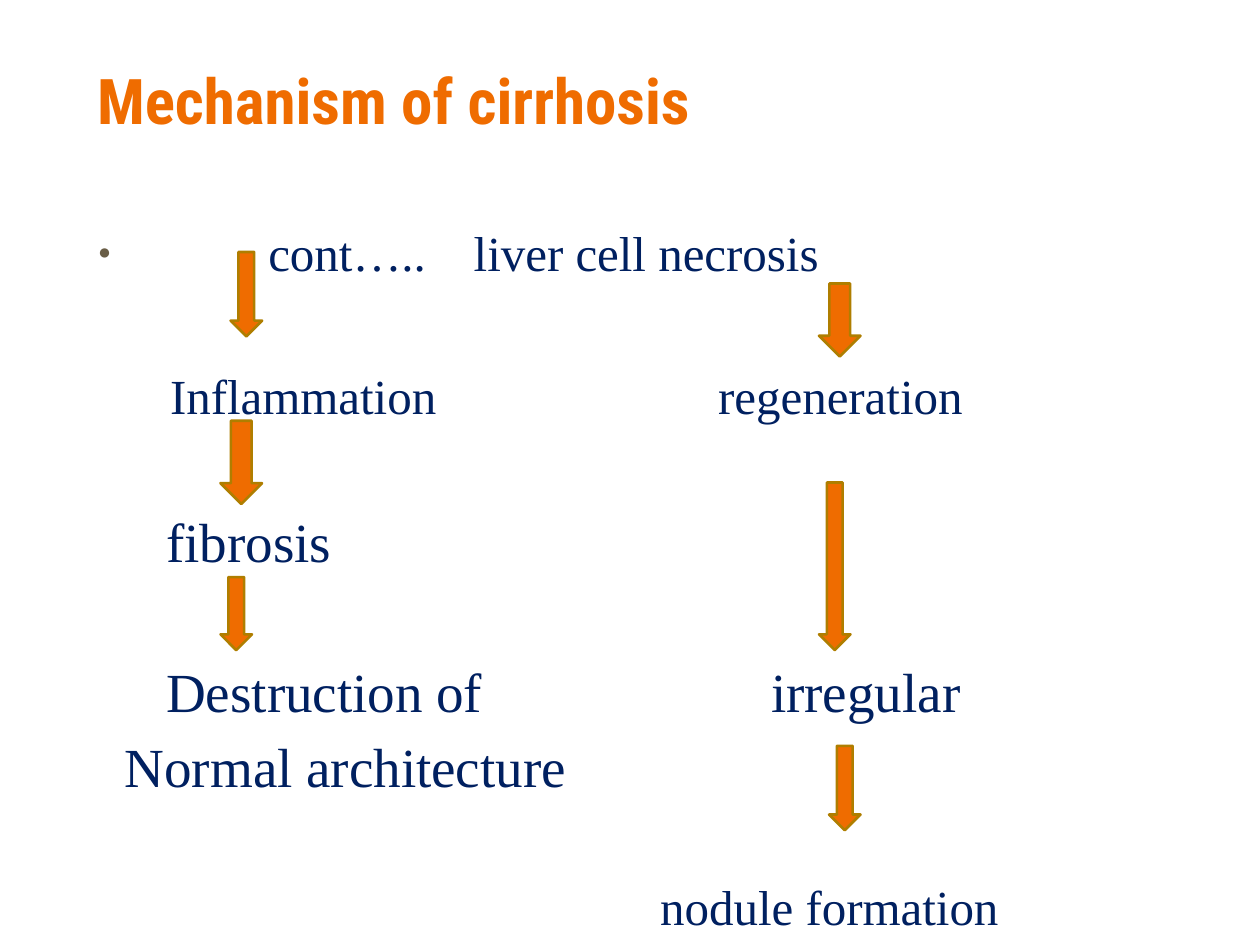
import pptx
import pptx.dml.color
import pptx.enum.shapes
import pptx.enum.text
import pptx.oxml.ns
import pptx.util
from lxml import etree
from pptx.util import Inches

ORANGE = "EF6C00"
OUTLINE = "AF7E00"
NAVY = "002060"
BROWN = "695D46"

LABELS = [
    ("liver cell necrosis", 3.09, 0.02, 2.9, 28),
    ("Inflammation", 0.68, 1.15, 2.3, 28),
    ("regeneration", 5.03, 1.15, 2.2, 28),
    ("fibrosis", 0.65, 2.28, 1.6, 31.5),
    ("Destruction of", 0.65, 3.47, 2.8, 31.5),
    ("irregular", 5.45, 3.47, 1.8, 31.5),
    ("Normal architecture", 0.32, 4.06, 3.8, 31.5),
    ("nodule formation", 4.57, 5.21, 2.9, 28),
]
ARROWS = [
    (1.16, 0.25, 0.25, 0.67),
    (1.08, 1.59, 0.33, 0.66),
    (1.08, 2.83, 0.25, 0.58),
    (5.83, 0.5, 0.33, 0.58),
    (5.83, 2.08, 0.25, 1.33),
    (5.91, 4.17, 0.25, 0.67),
]


def color(value):
    """Turn a hex string into a colour."""
    return pptx.dml.color.RGBColor.from_string(value)


def format_font(font, name, size, value, bold=False):
    """Set the face, size, colour and weight of a font."""
    font.name = name
    font.size = pptx.util.Pt(size)
    font.bold = bold
    font.color.rgb = color(value)


def add_bullet(paragraph, indent):
    """Give a paragraph a small round bullet with a hanging indent."""
    properties = paragraph._p.get_or_add_pPr()
    properties.set("marL", str(indent))
    properties.set("indent", str(-indent))
    bullet_color = etree.SubElement(properties, pptx.oxml.ns.qn("a:buClr"))
    etree.SubElement(bullet_color, pptx.oxml.ns.qn("a:srgbClr"), val=BROWN)
    etree.SubElement(properties, pptx.oxml.ns.qn("a:buSzPct"), val="44000")
    etree.SubElement(properties, pptx.oxml.ns.qn("a:buFont"), typeface="Arial")
    etree.SubElement(properties, pptx.oxml.ns.qn("a:buChar"), char="●")


def add_label(slide, text, left, top, width, size, bullet_indent=None):
    """Add one line of text without margins."""
    box = slide.shapes.add_textbox(left, top, width, Inches(size / 65))
    frame = box.text_frame
    frame.word_wrap = True
    frame.margin_left = frame.margin_right = 0
    frame.margin_top = frame.margin_bottom = 0
    frame.text = text
    paragraph = frame.paragraphs[0]
    if bullet_indent is not None:
        add_bullet(paragraph, bullet_indent)
    format_font(paragraph.runs[0].font, "Times New Roman", size, NAVY)


def add_arrow(slide, left, top, width, height):
    """Add an outlined arrow that points down."""
    arrow = slide.shapes.add_shape(
        pptx.enum.shapes.MSO_SHAPE.DOWN_ARROW, left, top, width, height)
    arrow.shadow.inherit = False
    arrow.fill.solid()
    arrow.fill.fore_color.rgb = color(ORANGE)
    arrow.line.color.rgb = color(OUTLINE)
    arrow.line.width = pptx.util.Pt(1.5)


def format_title(slide, left, top, width, height):
    """Place and format the slide title."""
    title = slide.shapes.title
    title.left, title.top, title.width, title.height = left, top, width, height
    frame = title.text_frame
    frame.text = "Mechanism of cirrhosis"
    frame.vertical_anchor = pptx.enum.text.MSO_ANCHOR.MIDDLE
    paragraph = frame.paragraphs[0]
    paragraph.alignment = pptx.enum.text.PP_ALIGN.LEFT
    format_font(paragraph.runs[0].font, "Roboto Condensed", 36, ORANGE, True)


def add_flow(slide, left, top):
    """Draw the two branches of the mechanism from the given corner."""
    add_label(slide, "cont…..", left + Inches(0.11), top + Inches(0.02),
              Inches(2.8), 28, Inches(1.35))
    for text, x, y, width, size in LABELS:
        add_label(slide, text, left + Inches(x), top + Inches(y), Inches(width), size)
    for x, y, width, height in ARROWS:
        add_arrow(slide, left + Inches(x), top + Inches(y), Inches(width), Inches(height))


def main():
    """Build and save the presentation."""
    presentation = pptx.Presentation()
    presentation.slide_width = Inches(10)
    presentation.slide_height = Inches(7.5)
    slide = presentation.slides.add_slide(presentation.slide_layouts[5])
    format_title(slide, Inches(0.67), Inches(0.25), Inches(8.92), Inches(1.08))
    add_flow(slide, Inches(0.67), Inches(1.75))
    presentation.save("out.pptx")


if __name__ == "__main__":
    main()
